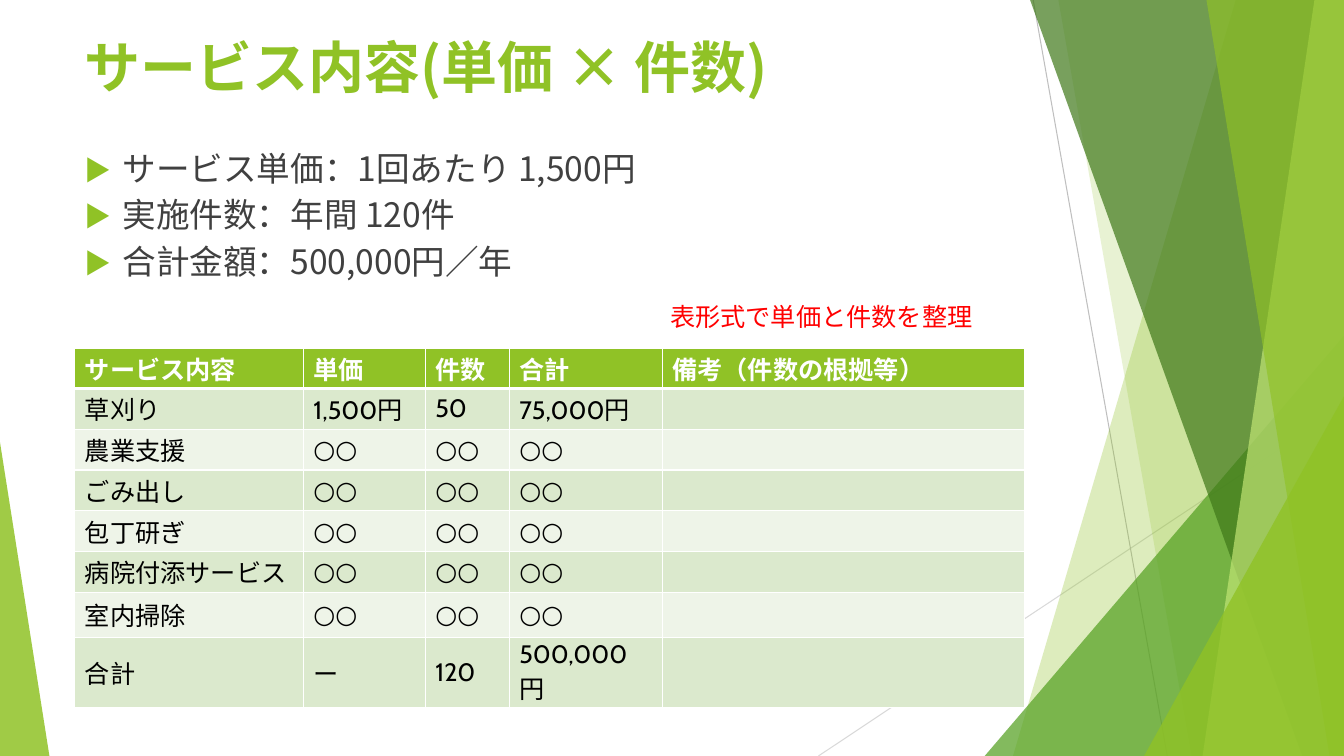
"""Build a slide listing service prices and counts in a table."""
from dataclasses import dataclass

from lxml import etree
from pptx import Presentation
from pptx.dml.color import RGBColor
from pptx.enum.shapes import MSO_CONNECTOR
from pptx.enum.text import MSO_ANCHOR, MSO_AUTO_SIZE, PP_ALIGN
from pptx.oxml.ns import qn
from pptx.util import Pt

STRAIGHT = MSO_CONNECTOR.STRAIGHT
TOP, MIDDLE = MSO_ANCHOR.TOP, MSO_ANCHOR.MIDDLE
LEFT = PP_ALIGN.LEFT
NO_AUTOFIT = MSO_AUTO_SIZE.NONE


@dataclass(frozen=True)
class Theme:
    """Colours, fonts and type sizes of the slide."""
    accent: str = "90C226"
    leaf: str = "54A021"
    forest: str = "3F7819"
    lime: str = "C0E474"
    white: str = "FFFFFF"
    black: str = "000000"
    text: str = "404040"
    note: str = "FF0000"
    bands: tuple = ("DBE9CD", "EEF4E8")
    heading_font: str = "Noto Sans CJK JP"
    table_font: str = "Cabin"
    title_size: float = 40
    body_size: float = 24
    table_size: float = 18


THEME = Theme()
WIDTH, HEIGHT = 960, 540

TITLE = "サービス内容(単価 × 件数)"
SUMMARY = ["サービス単価：1回あたり 1,500円", "実施件数：年間 120件", "合計金額：500,000円／年"]
NOTE = "表形式で単価と件数を整理"
HEADER = ["サービス内容", "単価", "件数", "合計", "備考（件数の根拠等）"]
PENDING = ["農業支援", "ごみ出し", "包丁研ぎ", "病院付添サービス", "室内掃除"]
ROWS = [
    HEADER,
    ["草刈り", "1,500円", "50", "75,000円", ""],
    *[[service, "○○", "○○", "○○", ""] for service in PENDING],
    ["合計", "ー", "120", "500,000円", ""],
]
COLUMN_WIDTHS = [163.3, 87.1, 60, 109.3, 258.8]
ROW_HEIGHTS = [28.4] + [29.1] * 5 + [32.2, 50.2]

TITLE_BOX = (53.3, 25.2, 676.8, 70.6)
BODY_BOX = (53.3, 105.1, 676.8, 164.9)
NOTE_BOX = (471.6, 213.8, 324, 51.1)
TABLE_ORIGIN = (53.4, 249.2)

RAYS = [
    ((584.6, 540), (960, 290.2), "D9D9D9"),
    ((738, 0), (833.8, 540), "BFBFBF"),
]
FACETS = [
    ((882.7, 0), (723.6, 540), THEME.accent, 30),
    ((756, 0), (851, 540), THEME.accent, 20),
    ((960, 239.8), (703.4, 540), THEME.leaf, 72),
    ((735.8, 0), (930.2, 540), THEME.forest, 70),
    ((938.9, 0), (859, 540), THEME.lime, 70),
    ((861.8, 0), (949.7, 540), THEME.accent, 65),
    ((960, 283), (817.2, 540), THEME.accent, 80),
    ((0, 316), (35.3, 540), THEME.accent, 85),
]


def rgb(code):
    """Turn a hex code into a colour."""
    return RGBColor.from_string(code)


def place(shape, box):
    """Move and size a shape, in points."""
    shape.left, shape.top, shape.width, shape.height = map(Pt, box)


def write(para, text, font, size, color, bold=False):
    """Add one formatted run to a paragraph."""
    span = para.add_run()
    span.text = text
    span.font.name = font
    span.font.size = Pt(size)
    span.font.bold = bold
    span.font.color.rgb = rgb(color)
    etree.SubElement(span.font._element, qn("a:ea"), typeface=THEME.heading_font)


def add_ray(page, start, end, color):
    """Draw a thin background line."""
    ray = page.shapes.add_connector(STRAIGHT, *map(Pt, start + end))
    ray.line.color.rgb = rgb(color)
    ray.line.width = Pt(0.75)
    etree.SubElement(ray._element.spPr, qn("a:effectLst"))


def add_facet(page, head, foot, color, opacity):
    """Draw a translucent facet reaching the nearer slide side."""
    side = 0 if foot[0] < WIDTH / 2 else WIDTH
    corners = [foot, (side, HEIGHT), (side, head[1])]
    outline = page.shapes.build_freeform(*map(Pt, head), scale=1.0)
    outline.add_line_segments([tuple(map(Pt, corner)) for corner in corners], close=True)
    facet = outline.convert_to_shape()
    facet.shadow.inherit = False
    facet.line.fill.background()
    facet.fill.solid()
    facet.fill.fore_color.rgb = rgb(color)
    tint = facet._element.spPr.find(f".//{qn('a:srgbClr')}")
    etree.SubElement(tint, qn("a:alpha"), val=str(opacity * 1000))


def prepare_frame(shape, box):
    """Place a text shape and return its top-anchored frame."""
    place(shape, box)
    frame = shape.text_frame
    frame.word_wrap = True
    frame.auto_size = NO_AUTOFIT
    frame.vertical_anchor = TOP
    return frame


def add_bullet(para):
    """Give a paragraph the accent triangle bullet."""
    props = para._p.get_or_add_pPr()
    props.set("marL", str(Pt(27)))
    props.set("indent", str(Pt(-27)))
    bullet_color = etree.SubElement(props, qn("a:buClr"))
    etree.SubElement(bullet_color, qn("a:srgbClr"), val=THEME.accent)
    etree.SubElement(props, qn("a:buSzPct"), val="80000")
    etree.SubElement(props, qn("a:buFont"), typeface=THEME.heading_font)
    etree.SubElement(props, qn("a:buChar"), char="▶")


def add_borders(cell, top, bottom):
    """Draw white borders around a cell."""
    props = cell._tc.get_or_add_tcPr()
    for side, width in (("L", 1), ("R", 1), ("T", top), ("B", bottom)):
        border = etree.SubElement(props, qn(f"a:ln{side}"), w=str(Pt(width)))
        fill = etree.SubElement(border, qn("a:solidFill"))
        etree.SubElement(fill, qn("a:srgbClr"), val=THEME.white)


def add_price_table(page):
    """Add the table of services, prices and counts."""
    size = (sum(COLUMN_WIDTHS), sum(ROW_HEIGHTS))
    table = page.shapes.add_table(
        len(ROWS), len(HEADER), *map(Pt, TABLE_ORIGIN + size)).table
    table.horz_banding = False
    for column, width in zip(table.columns, COLUMN_WIDTHS):
        column.width = Pt(width)
    for index, (row, height, values) in enumerate(zip(table.rows, ROW_HEIGHTS, ROWS)):
        row.height = Pt(height)
        is_header = index == 0
        fill = THEME.accent if is_header else THEME.bands[(index - 1) % 2]
        color = THEME.white if is_header else THEME.black
        for cell, value in zip(row.cells, values):
            add_borders(cell, 3 if index == 1 else 1, 3 if is_header else 1)
            cell.fill.solid()
            cell.fill.fore_color.rgb = rgb(fill)
            cell.vertical_anchor = MIDDLE
            cell.margin_top = cell.margin_bottom = Pt(0.9)
            if value:
                write(cell.text_frame.paragraphs[0], value, THEME.table_font,
                      THEME.table_size, color, is_header)


def main():
    """Build and save the deck."""
    deck = Presentation()
    deck.slide_width, deck.slide_height = Pt(WIDTH), Pt(HEIGHT)
    page = deck.slides.add_slide(deck.slide_layouts[1])
    title, body = page.placeholders
    for ray in RAYS:
        add_ray(page, *ray)
    for facet in FACETS:
        add_facet(page, *facet)
    for holder in (title, body):
        page.shapes._spTree.append(holder._element)

    para = prepare_frame(title, TITLE_BOX).paragraphs[0]
    para.alignment = LEFT
    para.line_spacing = 0.9
    write(para, TITLE, THEME.heading_font, THEME.title_size, THEME.accent, True)

    frame = prepare_frame(body, BODY_BOX)
    for index, line in enumerate(SUMMARY):
        para = frame.add_paragraph() if index else frame.paragraphs[0]
        para.line_spacing = 0.9
        para.space_before = Pt(7.3 if index else 0)
        add_bullet(para)
        write(para, line, THEME.heading_font, THEME.body_size, THEME.text)

    note = page.shapes.add_textbox(*map(Pt, NOTE_BOX))
    para = prepare_frame(note, NOTE_BOX).paragraphs[0]
    para.line_spacing = 0.9
    write(para, NOTE, THEME.table_font, THEME.table_size, THEME.note)

    add_price_table(page)
    deck.save("out.pptx")


if __name__ == "__main__":
    main()
